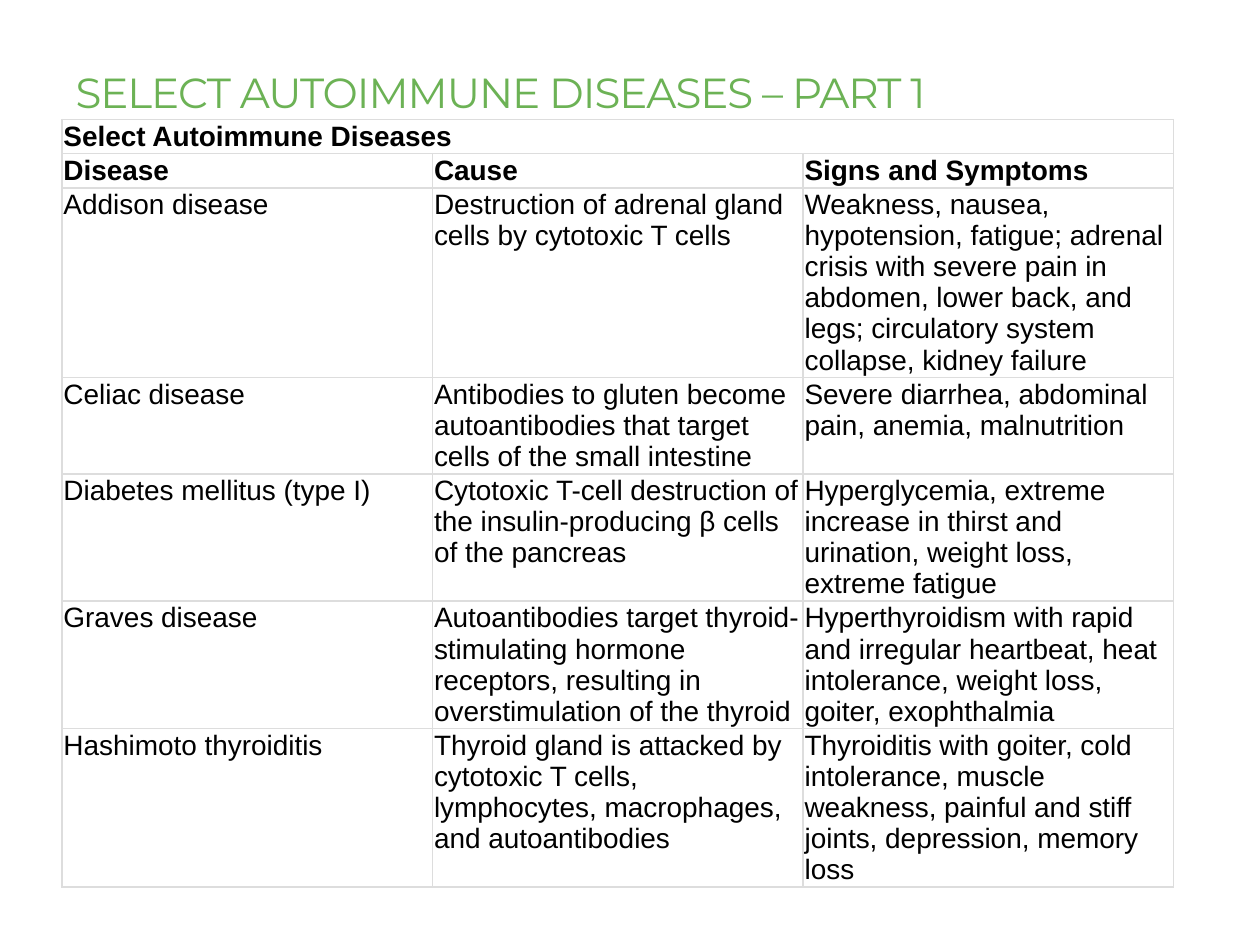
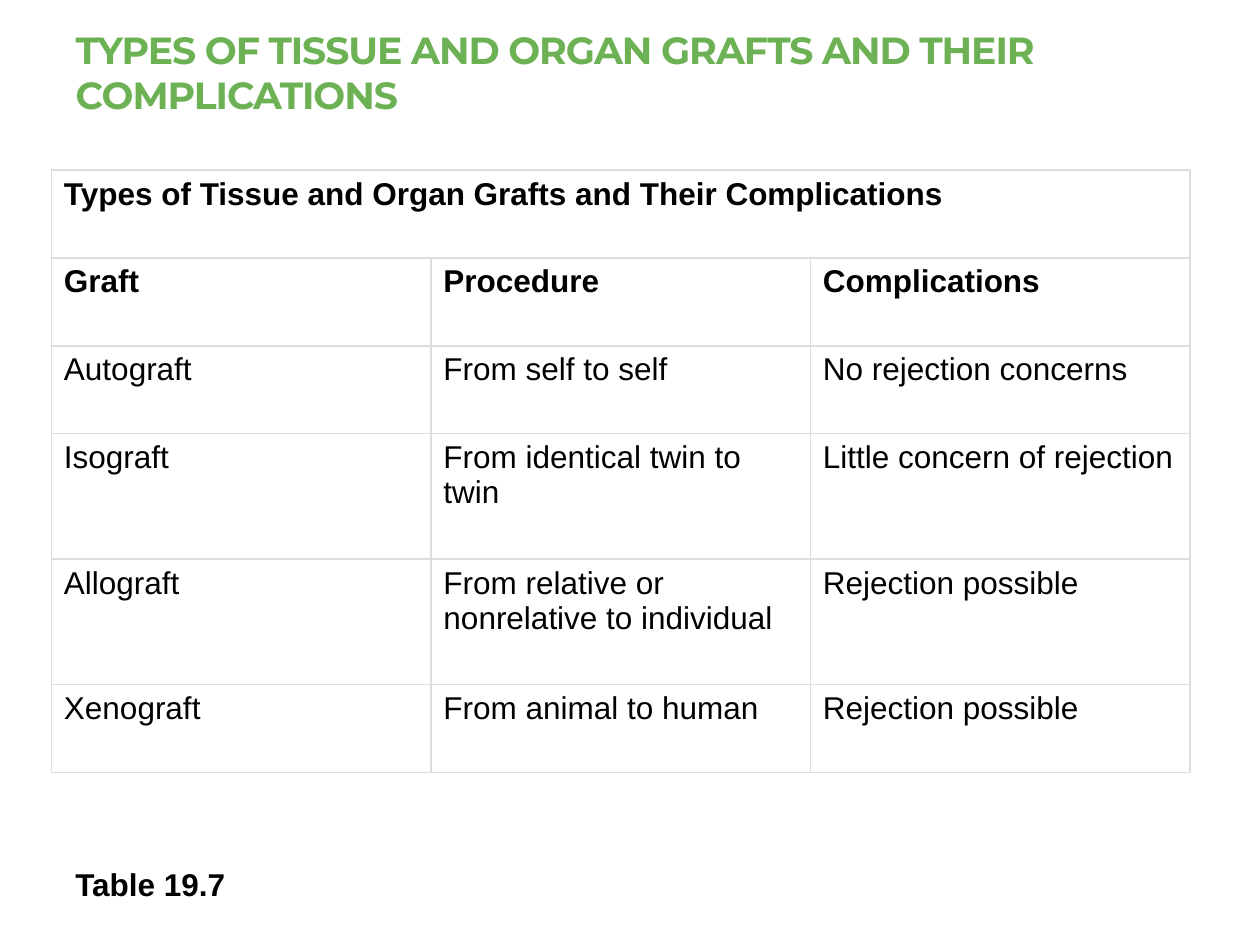
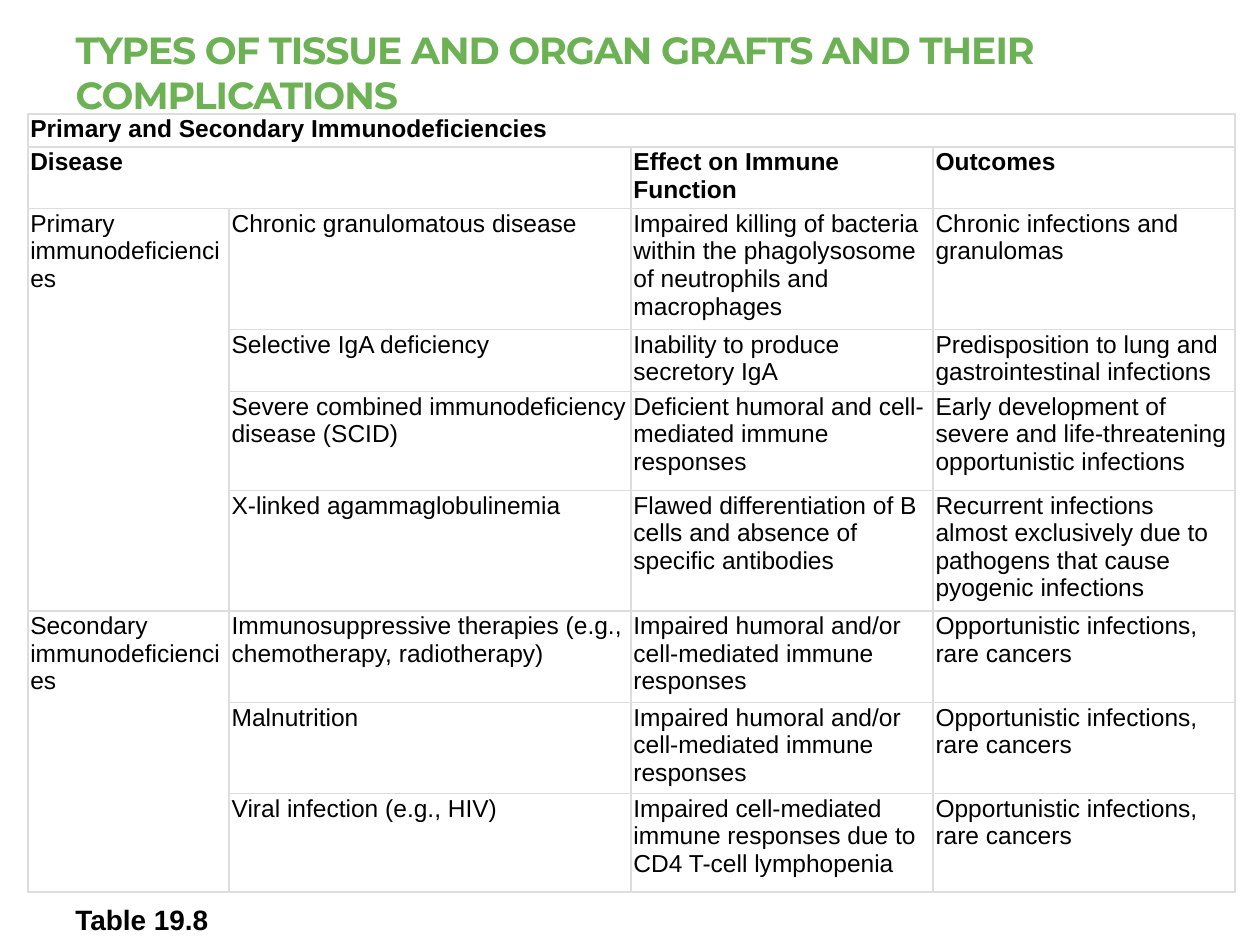
from pptx import Presentation
from pptx.dml.color import RGBColor
from pptx.enum import text
from pptx.oxml import parse_xml
from pptx.oxml.ns import nsdecls
from pptx.util import Cm, Pt

GREEN, BLACK, WHITE, GREY = "6CB255", "000000", "FFFFFF", "DDDDDD"
HEAD, BODY = "Montserrat", "Arial"
GRAFTS = "TYPES OF TISSUE AND ORGAN GRAFTS AND THEIR COMPLICATIONS"
WEAK = "Impaired humoral and/or cell-mediated immune responses"
RARE = "Opportunistic infections, rare cancers"

SELF = [
    ["Select Autoimmune Diseases", None, None],
    ["Disease", "Cause", "Signs and Symptoms"],
    ["Addison disease",
     "Destruction of adrenal gland cells by cytotoxic T cells",
     "Weakness, nausea, hypotension, fatigue; adrenal crisis with severe pain in "
     "abdomen, lower back, and legs; circulatory system collapse, kidney failure"],
    ["Celiac disease",
     "Antibodies to gluten become autoantibodies that target cells of the small intestine",
     "Severe diarrhea, abdominal pain, anemia, malnutrition"],
    ["Diabetes mellitus (type I)",
     "Cytotoxic T-cell destruction of the insulin-producing β cells of the pancreas",
     "Hyperglycemia, extreme increase in thirst and urination, weight loss, extreme fatigue"],
    ["Graves disease",
     "Autoantibodies target thyroid-stimulating hormone receptors, resulting in "
     "overstimulation of the thyroid",
     "Hyperthyroidism with rapid and irregular heartbeat, heat intolerance, weight loss, "
     "goiter, exophthalmia"],
    ["Hashimoto thyroiditis",
     "Thyroid gland is attacked by cytotoxic T cells, lymphocytes, macrophages, "
     "and autoantibodies",
     "Thyroiditis with goiter, cold intolerance, muscle weakness, painful and stiff joints, "
     "depression, memory loss"],
]

GRAFT = [
    ["Types of Tissue and Organ Grafts and Their Complications", None, None],
    ["Graft", "Procedure", "Complications"],
    ["Autograft", "From self to self", "No rejection concerns"],
    ["Isograft", "From identical twin to twin", "Little concern of rejection"],
    ["Allograft", "From relative or nonrelative to individual", "Rejection possible"],
    ["Xenograft", "From animal to human", "Rejection possible"],
]

IMMUNE = [
    ["Primary and Secondary Immunodeficiencies", None, None, None],
    ["Disease", None, "Effect on Immune Function", "Outcomes"],
    ["Primary immunodeficiencies", "Chronic granulomatous disease",
     "Impaired killing of bacteria within the phagolysosome of neutrophils and macrophages",
     "Chronic infections and granulomas"],
    [None, "Selective IgA deficiency", "Inability to produce secretory IgA",
     "Predisposition to lung and gastrointestinal infections"],
    [None, "Severe combined immunodeficiency disease (SCID)",
     "Deficient humoral and cell-mediated immune responses",
     "Early development of severe and life-threatening opportunistic infections"],
    [None, "X-linked agammaglobulinemia",
     "Flawed differentiation of B cells and absence of specific antibodies",
     "Recurrent infections almost exclusively due to pathogens that cause pyogenic infections"],
    ["Secondary immunodeficiencies",
     "Immunosuppressive therapies (e.g., chemotherapy, radiotherapy)", WEAK, RARE],
    [None, "Malnutrition", WEAK, RARE],
    [None, "Viral infection (e.g., HIV)",
     "Impaired cell-mediated immune responses due to CD4 T-cell lymphopenia", RARE],
]


def color(code):
    return RGBColor.from_string(code)


def style(para, face, size, code, bold):
    para.alignment = text.PP_ALIGN.LEFT
    font = para.font
    font.name, font.size, font.bold = face, Pt(size), bold
    font.color.rgb = color(code)


def add_page(deck, title, size, bold):
    page = deck.slides.add_slide(deck.slide_layouts[5])
    head = page.shapes.title
    head.left, head.top, head.width, head.height = Cm(1.27), Cm(0.66), Cm(22.4), Cm(1.83)
    frame = head.text_frame
    frame.text = title
    frame.word_wrap = True
    frame.auto_size = text.MSO_AUTO_SIZE.NONE
    frame.vertical_anchor = text.MSO_ANCHOR.BOTTOM
    para = frame.paragraphs[0]
    style(para, HEAD, size, GREEN, bold)
    para.runs[0].font._element.set("spc", "-60")
    return page


def add_label(page, words, top, width, size):
    box = page.shapes.add_textbox(Cm(1.27), Cm(top), Cm(width), Cm(1))
    frame = box.text_frame
    frame.text = words
    frame.word_wrap = False
    frame.auto_size = text.MSO_AUTO_SIZE.SHAPE_TO_FIT_TEXT
    style(frame.paragraphs[0], BODY, size, BLACK, True)


def add_rules(cell):
    props = cell._tc.get_or_add_tcPr()
    for spot, side in enumerate("LRTB"):
        props.insert(spot, parse_xml(
            f'<a:ln{side} {nsdecls("a")} w="12700"><a:solidFill>'
            f'<a:srgbClr val="{GREY}"/></a:solidFill></a:ln{side}>'))


def add_grid(page, data, left, top, cols, rows, size, pad, spans):
    shape = page.shapes.add_table(len(rows), len(cols), Cm(left), Cm(top),
                                  Cm(sum(cols)), Cm(sum(rows)))
    grid = shape.table
    grid.first_row = grid.horz_banding = False
    for col, width in zip(grid.columns, cols):
        col.width = Cm(width)
    for row, height in zip(grid.rows, rows):
        row.height = Cm(height)
    for r, line in enumerate(data):
        for c, words in enumerate(line):
            cell = grid.cell(r, c)
            cell.margin_left = cell.margin_right = Cm(pad[0])
            cell.margin_top = cell.margin_bottom = Cm(pad[1])
            cell.fill.solid()
            cell.fill.fore_color.rgb = color(WHITE)
            add_rules(cell)
            if words:
                cell.text = words
            style(cell.text_frame.paragraphs[0], BODY, size, BLACK, r < 2)
    for r, c, down, across in spans:
        grid.cell(r, c).merge(grid.cell(r + down - 1, c + across - 1))


def main():
    deck = Presentation()
    deck.slide_width, deck.slide_height = Cm(25.4), Cm(19.05)

    page = add_page(deck, "SELECT AUTOIMMUNE DISEASES – PART 1", 24, False)
    add_grid(page, SELF, 1.25, 2.41, [7.47] * 3,
             [0.66, 0.66, 3.8, 1.91, 2.54, 2.54, 3.18], 16, (0.03, 0.03), [(0, 0, 1, 3)])

    page = add_page(deck, GRAFTS, 21.6, True)
    add_grid(page, GRAFT, 1.04, 3.43, [7.65] * 3,
             [1.77, 1.77, 1.77, 2.53, 2.53, 1.77], 18, (0.25, 0.13), [(0, 0, 1, 3)])
    add_label(page, "Table 19.7", 17.32, 3.56, 18)

    page = add_page(deck, GRAFTS, 21.6, True)
    add_label(page, "Table 19.8", 18.06, 3.23, 16)
    add_grid(page, IMMUNE, 0.56, 2.3, [4.06, 8.1, 6.09, 6.09],
             [0.66, 1.24, 2.43, 1.24, 2, 2.43, 1.83, 1.83, 1.98], 14, (0.05, 0.03),
             [(0, 0, 1, 4), (1, 0, 1, 2), (2, 0, 4, 1), (6, 0, 3, 1)])

    deck.save("out.pptx")


if __name__ == "__main__":
    main()
